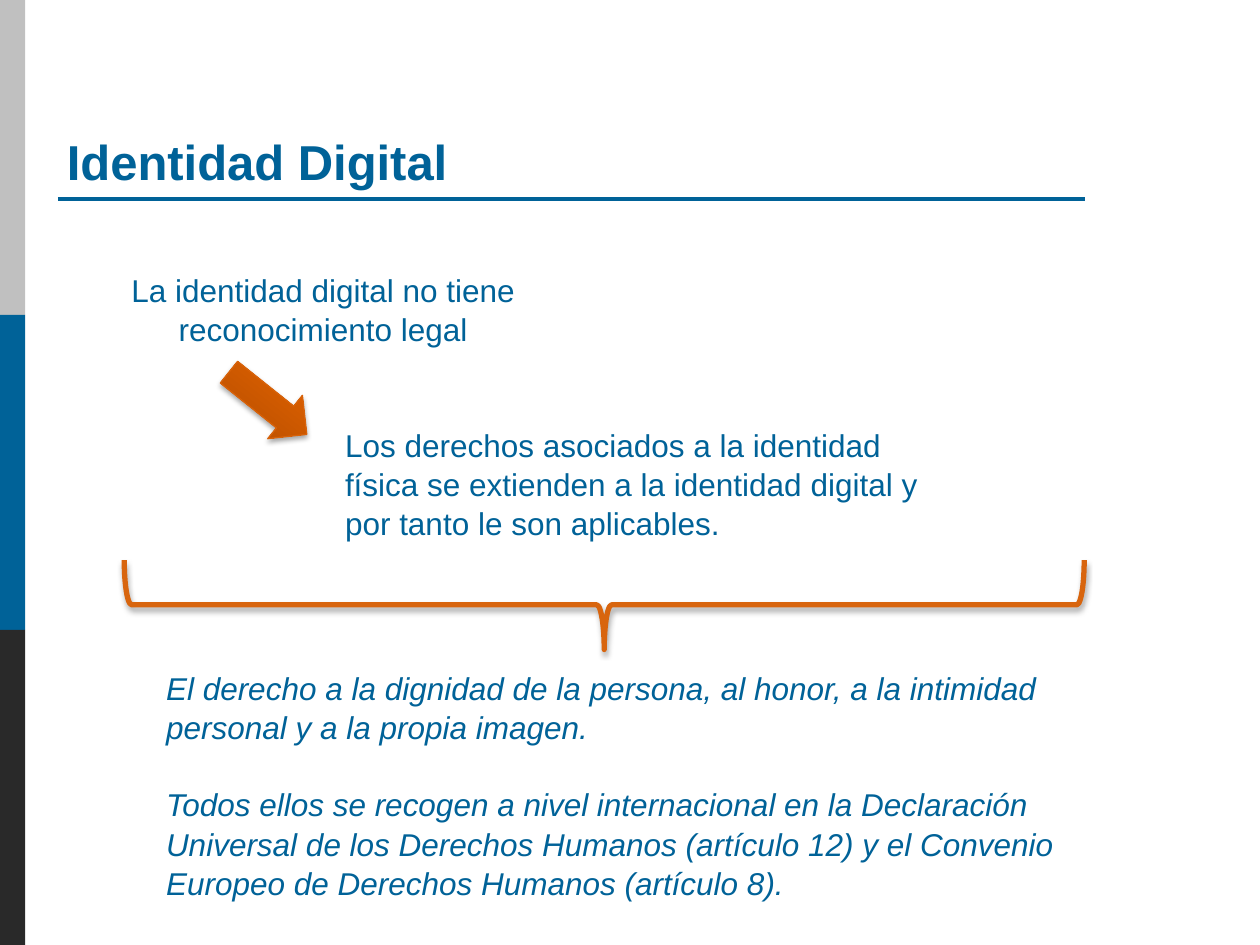
"""Builds the slide on digital identity and the rights that extend to it."""
from lxml import etree
from pptx import Presentation
from pptx.dml.color import RGBColor
from pptx.enum.shapes import MSO_CONNECTOR, MSO_SHAPE
from pptx.enum.text import MSO_ANCHOR, PP_ALIGN
from pptx.oxml import parse_xml
from pptx.oxml.ns import nsdecls, qn
from pptx.util import Pt

RECTANGLE, ARROW, BRACE = MSO_SHAPE.RECTANGLE, MSO_SHAPE.RIGHT_ARROW, MSO_SHAPE.RIGHT_BRACE
STRAIGHT = MSO_CONNECTOR.STRAIGHT
BOTTOM = MSO_ANCHOR.BOTTOM
LEFT, CENTER = PP_ALIGN.LEFT, PP_ALIGN.CENTER

BLUE = RGBColor(0x00, 0x62, 0x98)
SILVER = RGBColor(0xC0, 0xC0, 0xC0)
CHARCOAL = RGBColor(0x29, 0x29, 0x29)
ARROW_EDGE = RGBColor(0xD8, 0x62, 0x09)
BRACE_ORANGE = RGBColor(0xD8, 0x65, 0x0E)
ARROW_STOPS = [(0, "AC4A00"), (80, "DF6000"), (100, "E06000")]

WIDTH, HEIGHT = 720, 540
BAR_WIDTH = 14.4
BAR_COLORS = [SILVER, BLUE, CHARCOAL]
FONT = "Arial"
BODY_SIZE = 18
LINE_SPACING = 1.04
BLANK_LINE = 21.5

TITLE = "Identidad Digital"
TITLE_BOX = (31, 66.2, 598.3, 46.1)
RULE = (33.1, 113.8, 619.9, 113.8)
TEXTS = [
    ((65.5, 150.5, 238.3, 51.1), CENTER, False,
     ["La identidad digital no tiene reconocimiento legal"]),
    ((87.8, 378, 555.8, 138.2), LEFT, True,
     ["El derecho a la dignidad de la persona, al honor, a la intimidad personal "
      "y a la propia imagen.",
      "Todos ellos se recogen a nivel internacional en la Declaración Universal de los "
      "Derechos Humanos (artículo 12) y el Convenio Europeo de Derechos Humanos (artículo 8)."]),
    ((190.1, 239, 360, 72.7), LEFT, False,
     ["Los derechos asociados a la identidad física se extienden a la identidad digital "
      "y por tanto le son aplicables."]),
]
ARROW_BOX, ARROW_ROTATION = (124.6, 214.6, 56.9, 31.7), 38.6
BRACE_BOX, BRACE_ROTATION = (319.7, 71.3, 51.1, 548.6), 90


def points(values):
    return [Pt(value) for value in values]


def style_font(paragraph, size, bold=False, italic=False):
    for run in paragraph.runs:
        font = run.font
        font.name, font.size, font.bold, font.italic = FONT, Pt(size), bold, italic
        font.color.rgb = BLUE


def add_title(slide):
    title = slide.shapes.title
    title.left, title.top, title.width, title.height = points(TITLE_BOX)
    frame = title.text_frame
    frame.text = TITLE
    frame.word_wrap = True
    frame.vertical_anchor = BOTTOM
    frame.paragraphs[0].alignment = LEFT
    style_font(frame.paragraphs[0], 28, bold=True)


def add_rule(slide):
    rule = slide.shapes.add_connector(STRAIGHT, *points(RULE))
    rule.line.color.rgb = BLUE
    rule.line.width = Pt(2.25)
    etree.SubElement(rule._element.spPr, qn("a:effectLst"))


def add_side_bars(slide):
    bar_height = HEIGHT / len(BAR_COLORS)
    for index, color in enumerate(BAR_COLORS):
        box = points((0, index * bar_height, BAR_WIDTH, bar_height))
        bar = slide.shapes.add_shape(RECTANGLE, *box)
        bar.shadow.inherit = False
        bar.fill.solid()
        bar.fill.fore_color.rgb = color
        bar.line.fill.background()


def add_text(slide, box, alignment, italic, lines):
    frame = slide.shapes.add_textbox(*points(box)).text_frame
    frame.word_wrap = True
    frame.text = "\n".join(lines)
    for index, paragraph in enumerate(frame.paragraphs):
        paragraph.alignment = alignment
        paragraph.line_spacing = LINE_SPACING
        if index:
            paragraph.space_before = Pt(BLANK_LINE)
        style_font(paragraph, BODY_SIZE, italic=italic)


def add_outlined_shape(slide, kind, box, rotation, color, line_width):
    shape = slide.shapes.add_shape(kind, *points(box))
    shape.rotation = rotation
    shape.fill.background()
    shape.line.color.rgb = color
    shape.line.width = Pt(line_width)
    shape.shadow.inherit = False
    effects = shape._element.spPr.find(qn("a:effectLst"))
    effects.append(parse_xml(
        f'<a:outerShdw {nsdecls("a")} blurRad="{Pt(3.1)}" dist="{Pt(1.8)}" dir="5400000" '
        'rotWithShape="0"><a:srgbClr val="000000"><a:alpha val="35000"/></a:srgbClr>'
        '</a:outerShdw>'))
    return shape


def fill_gradient(shape, stops):
    stop_xml = "".join(f'<a:gs pos="{position * 1000}"><a:srgbClr val="{color}"/></a:gs>'
                       for position, color in stops)
    properties = shape._element.spPr
    properties.replace(properties.find(qn("a:noFill")), parse_xml(
        f'<a:gradFill {nsdecls("a")} rotWithShape="1"><a:gsLst>{stop_xml}</a:gsLst>'
        '<a:lin ang="16200000" scaled="0"/></a:gradFill>'))


def main():
    presentation = Presentation()
    presentation.slide_width, presentation.slide_height = Pt(WIDTH), Pt(HEIGHT)
    slide = presentation.slides.add_slide(presentation.slide_layouts[5])
    add_rule(slide)
    add_side_bars(slide)
    add_title(slide)
    for text in TEXTS:
        add_text(slide, *text)
    arrow = add_outlined_shape(slide, ARROW, ARROW_BOX, ARROW_ROTATION, ARROW_EDGE, 0.75)
    fill_gradient(arrow, ARROW_STOPS)
    add_outlined_shape(slide, BRACE, BRACE_BOX, BRACE_ROTATION, BRACE_ORANGE, 3)
    presentation.save("out.pptx")


if __name__ == "__main__":
    main()
